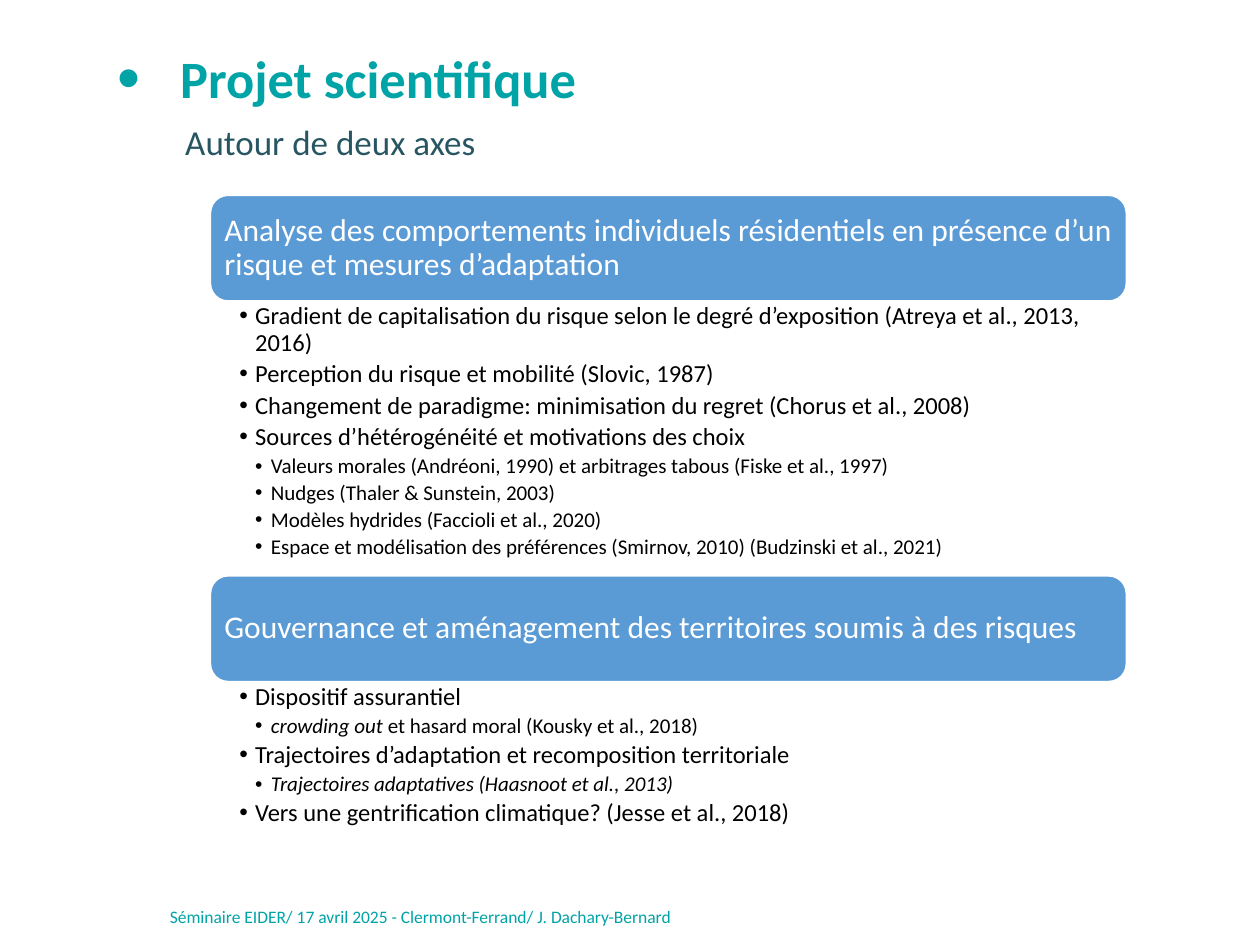
from lxml.etree import SubElement
from pptx import Presentation
from pptx.dml.color import RGBColor
from pptx.enum.shapes import MSO_SHAPE as Shape
from pptx.enum.text import MSO_ANCHOR as Anchor, MSO_AUTO_SIZE as AutoSize, PP_ALIGN as Align
from pptx.oxml.ns import qn
from pptx.util import Inches, Pt

COLORS = {"teal": "00A3A6", "slate": "275662", "blue": "5B9BD5", "white": "FFFFFF", "black": "000000"}
FONT = "Calibri"
HEADER_HEIGHT = 0.84
AXES = [
    (1.55, 2.18, "Analyse des comportements individuels résidentiels en présence d’un risque et mesures d’adaptation", [
        (1, "Gradient de capitalisation du risque selon le degré d’exposition (Atreya et al., 2013, 2016)"),
        (1, "Perception du risque et mobilité (Slovic, 1987)"),
        (1, "Changement de paradigme: minimisation du regret (Chorus et al., 2008)"),
        (1, "Sources d’hétérogénéité et motivations des choix"),
        (2, "Valeurs morales (Andréoni, 1990) et arbitrages tabous (Fiske et al., 1997)"),
        (2, "Nudges (Thaler & Sunstein, 2003)"),
        (2, "Modèles hydrides (Faccioli et al., 2020)"),
        (2, "Espace et modélisation des préférences (Smirnov, 2010) (Budzinski et al., 2021)"),
    ]),
    (4.57, 1.23, "Gouvernance et aménagement des territoires soumis à des risques", [
        (1, "Dispositif assurantiel"),
        (2, "*crowding out *et hasard moral (Kousky et al., 2018)"),
        (1, "Trajectoires d’adaptation et recomposition territoriale"),
        (2, "*Trajectoires adaptatives (Haasnoot et al., 2013)*"),
        (1, "Vers une gentrification climatique? (Jesse et al., 2018)"),
    ]),
]


def color(name):
    """Return the named palette colour."""
    return RGBColor.from_string(COLORS[name])


def place(box, left, top, width, height):
    """Move and size a box, in inches."""
    box.left, box.top, box.width, box.height = map(Inches, (left, top, width, height))


def prepare(box, insets=(0.1, 0.05, 0.1, 0.05), anchor=Anchor.TOP):
    """Set the wrapping, insets and anchor of a box and return its text frame."""
    frame = box.text_frame
    frame.word_wrap = True
    frame.auto_size = AutoSize.NONE
    frame.vertical_anchor = anchor
    frame.margin_left, frame.margin_top, frame.margin_right, frame.margin_bottom = map(Inches, insets)
    return frame


def add_bullet(para, indent, hanging, percent):
    """Give a paragraph a round bullet with a hanging indent."""
    props = para._p.get_or_add_pPr()
    props.set("marL", str(Inches(indent)))
    props.set("indent", str(-Inches(hanging)))
    SubElement(props, qn("a:buSzPct"), val=str(percent * 1000))
    SubElement(props, qn("a:buFont"), typeface="Arial")
    SubElement(props, qn("a:buChar"), char="•")


def write(para, text, size, tint, bold=False, spacing=0.9, after=0, bullet=None, level=0):
    """Write one formatted paragraph; asterisks enclose italics."""
    para.level = level
    if bullet:
        add_bullet(para, *bullet)
    para.alignment = Align.LEFT
    para.line_spacing = spacing
    para.space_before = Pt(0)
    para.space_after = Pt(after)
    for index, part in enumerate(text.split("*")):
        if part:
            span = para.add_run()
            span.text = part
            span.font.name = FONT
            span.font.size = Pt(size)
            span.font.bold = bold
            span.font.italic = index % 2 == 1
            span.font.color.rgb = color(tint)


def add_heading(page):
    """Fill the title and subtitle placeholders."""
    title, subtitle = page.shapes.title, page.placeholders[1]
    place(title, 0.93, 0.16, 8.38, 0.97)
    frame = prepare(title, (0, 0.05, 0.1, 0.05), Anchor.MIDDLE)
    write(frame.paragraphs[0], "Projet scientifique", 30, "teal", bold=True, bullet=(0.5, 0.5, 125))
    place(subtitle, 1.37, 0.94, 7.94, 0.74)
    write(prepare(subtitle).paragraphs[0], "Autour de deux axes", 20, "slate")


def add_axis(page, left, top, width, list_height, heading, items):
    """Draw one research axis: a rounded header above its bullet list."""
    header = page.shapes.add_shape(Shape.ROUNDED_RECTANGLE, 0, 0, 0, 0)
    place(header, left, top, width, HEADER_HEIGHT)
    header.shadow.inherit = False
    header.fill.solid()
    header.fill.fore_color.rgb = color("blue")
    header.line.color.rgb = color("white")
    header.line.width = Pt(1)
    write(prepare(header, (0.07,) * 4, Anchor.MIDDLE).paragraphs[0], heading, 18, "white")

    listing = page.shapes.add_textbox(0, 0, 0, 0)
    place(listing, left, top + HEADER_HEIGHT, width, list_height)
    frame = prepare(listing, (0.23, 0.02, 0.11, 0.02))
    for index, (level, text) in enumerate(items):
        para = frame.add_paragraph() if index else frame.paragraphs[0]
        size = 16 - 2 * level
        write(para, text, size, "black", after=size * 0.2, level=level,
              bullet=(0.125 * level, 0.125, 100))


def add_footer(page):
    """Add the seminar line at the foot of the slide."""
    footer = page.shapes.add_textbox(0, 0, 0, 0)
    place(footer, 1.25, 7.14, 7.34, 0.28)
    write(prepare(footer).paragraphs[0], "Séminaire EIDER/ 17 avril 2025 - Clermont-Ferrand/ J. Dachary-Bernard",
          10, "teal", spacing=1.0)


def main():
    """Build and save the slide."""
    deck = Presentation()
    deck.slide_width, deck.slide_height = Inches(10), Inches(7.5)
    page = deck.slides.add_slide(deck.slide_layouts[0])
    add_footer(page)
    add_heading(page)
    for top, list_height, heading, items in AXES:
        add_axis(page, 1.67, top, 7.27, list_height, heading, items)
    deck.save("out.pptx")


if __name__ == "__main__":
    main()
